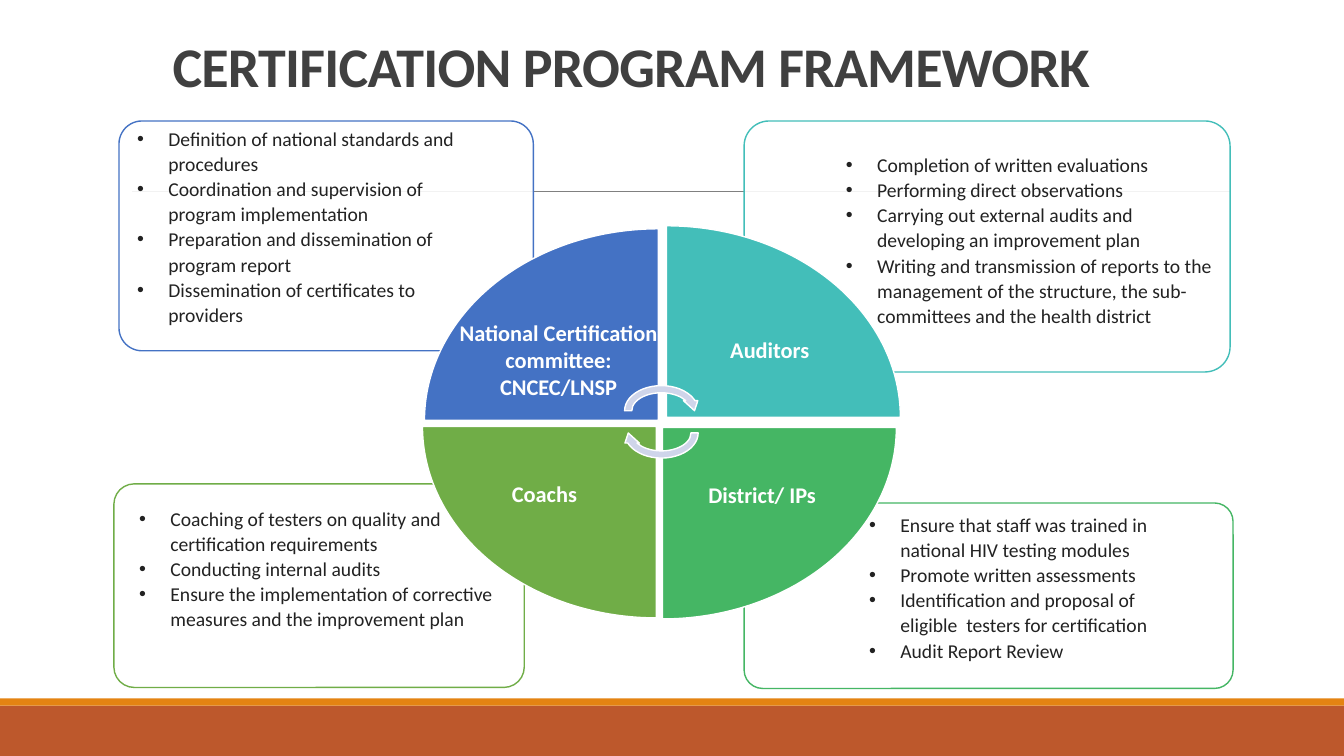
from pptx import Presentation
from pptx.dml.color import RGBColor
from pptx.enum.shapes import MSO_CONNECTOR as Connector, MSO_SHAPE as Preset
from pptx.enum.text import MSO_ANCHOR as Anchor, MSO_AUTO_SIZE as AutoSize, PP_ALIGN as Align
from pptx.oxml.ns import qn
from pptx.util import Inches, Pt
from lxml.etree import SubElement


def rgb(hex_color):
    return RGBColor.from_string(hex_color)


class FrameworkSlide:
    FONT = "Calibri"
    INK, TITLE_INK, WHITE = "222222", "404040", "FFFFFF"
    CELL = 0.1
    WEDGE_SIZE = 23.2, 19

    def __init__(self, deck, layout):
        self.slide = deck.slides.add_slide(deck.slide_layouts[layout])
        self.shapes = self.slide.shapes

    def grid(self, *cells):
        return [Inches(cell * self.CELL) for cell in cells]

    def move(self, holder, box):
        holder.left, holder.top, holder.width, holder.height = self.grid(*box)

    def style(self, paragraph, size, color, bold=False):
        font = paragraph.font
        font.name, font.size, font.bold = self.FONT, Pt(size), bold
        font.color.rgb = rgb(color)

    def frame(self, holder, anchor, inset):
        frame = holder.text_frame
        frame.word_wrap, frame.auto_size = True, AutoSize.NONE
        frame.vertical_anchor = anchor
        frame.margin_left = frame.margin_right = Inches(inset)
        frame.margin_top = frame.margin_bottom = Inches(inset)
        return frame

    def title(self, text, box):
        heading = self.shapes.title
        self.move(heading, box)
        frame = self.frame(heading, Anchor.BOTTOM, 0.05)
        frame.text = text
        paragraph = frame.paragraphs[0]
        paragraph.alignment, paragraph.line_spacing = Align.CENTER, 0.85
        self.style(paragraph, 40, self.TITLE_INK, True)
        paragraph.runs[0].font._element.set("spc", "-50")

    def shape(self, preset, box, fill, line=None, turn=0):
        shape = self.shapes.add_shape(preset, *self.grid(*box))
        shape.shadow.inherit = False
        shape.rotation = turn
        shape.fill.solid()
        shape.fill.fore_color.rgb = rgb(fill)
        if line:
            shape.line.color.rgb = rgb(line)
            shape.line.width = Pt(1)
        else:
            shape.line.fill.background()
        return shape

    def rule(self, left, right, row, color):
        rule = self.shapes.add_connector(
            Connector.STRAIGHT, *self.grid(left, row, right, row))
        rule.line.color.rgb = rgb(color)
        rule.line.width = Pt(0.5)
        SubElement(rule._element.spPr, qn("a:effectLst"))

    def card(self, box, color):
        card = self.shape(Preset.ROUNDED_RECTANGLE, box, self.WHITE, color)
        card.adjustments[0] = 0.1
        tint = card._element.spPr.find(qn("a:solidFill"))[0]
        SubElement(tint, qn("a:alpha"), val="90000")

    def bullets(self, index, duties, box):
        body = self.slide.placeholders[index]
        self.move(body, box)
        self.shapes._spTree.append(body._element)
        frame = self.frame(body, Anchor.TOP, 0.03)
        frame.text = "\n".join(duties)
        for paragraph in frame.paragraphs:
            props = paragraph._p.get_or_add_pPr()
            props.set("marL", str(Inches(0.51)))
            props.set("indent", str(Inches(-0.31)))
            SubElement(props, qn("a:buFont"), typeface="Arial")
            SubElement(props, qn("a:buChar"), char="•")
            paragraph.alignment, paragraph.line_spacing = Align.LEFT, 1.07
            paragraph.space_before = paragraph.space_after = Pt(0)
            self.style(paragraph, 14, self.INK)

    def wedge(self, left, top, color, turn):
        width, height = self.WEDGE_SIZE
        if turn % 180:
            shift = (width - height) / 2
            box = left + shift, top - shift, height, width
        else:
            box = left, top, width, height
        self.shape(Preset.PIE_WEDGE, box, color, self.WHITE, turn)

    def label(self, text, box):
        caption = self.shapes.add_textbox(*self.grid(*box))
        frame = self.frame(caption, Anchor.MIDDLE, 0.12)
        frame.text = text
        for paragraph in frame.paragraphs:
            paragraph.alignment = Align.CENTER
            self.style(paragraph, 16, self.WHITE, True)


ROLES = [
    dict(name="National Certification committee:\nCNCEC/LNSP", color="4472C4",
         card=(11.8, 12, 41.1, 22.8), list=(11.3, 12.1, 36.8, 22.8),
         wedge=(42.1, 22.7), label=(43.2, 29, 24.4, 13.4),
         duties=["Definition of national standards and procedures",
                 "Coordination and supervision of program implementation",
                 "Preparation and dissemination of program report",
                 "Dissemination of certificates to providers"]),
    dict(name="Auditors", color="43BEB9",
         card=(73.8, 12, 48.2, 24.9), list=(81.6, 14.7, 40.1, 22.3),
         wedge=(66.1, 22.4), label=(66.1, 28, 20.5, 13.4),
         duties=["Completion of written evaluations",
                 "Performing direct observations",
                 "Carrying out external audits and developing an improvement plan",
                 "Writing and transmission of reports to the management of the "
                 "structure, the sub-committees and the health district"]),
    dict(name="District/ IPs", color="45B664",
         card=(73.8, 49.9, 48.5, 18.4), list=(83.9, 50.4, 34.7, 17.8),
         wedge=(65.7, 42.4), label=(65.7, 42.4, 19.8, 13.4),
         duties=["Ensure that staff was trained in national HIV testing modules",
                 "Promote written assessments",
                 "Identification and proposal of eligible  testers for certification",
                 "Audit Report Review"]),
    dict(name="Coachs", color="70AD47",
         card=(11.3, 48, 40.7, 20.2), list=(11.5, 49.8, 38.8, 18.5),
         wedge=(41.9, 42.3), label=(41.6, 42.3, 24.8, 13.4),
         duties=["Coaching of testers on quality and certification requirements",
                 "Conducting internal audits",
                 "Ensure the implementation of corrective measures and the "
                 "improvement plan"]),
]


def main():
    deck = Presentation()
    deck.slide_width, deck.slide_height = Inches(13.33), Inches(7.5)
    page = FrameworkSlide(deck, 4)
    page.shape(Preset.RECTANGLE, (0, 70, 133.3, 5), "BD582C")
    page.shape(Preset.RECTANGLE, (0, 69.3, 133.3, 0.7), "E48312")
    page.rule(13.1, 122.1, 19, "808080")
    page.title("CERTIFICATION PROGRAM FRAMEWORK", (10.1, -4, 105, 14.3))
    for index, role in enumerate(ROLES, start=1):
        page.card(role["card"], role["color"])
        page.bullets(index, role["duties"], role["list"])
    for quarter, role in enumerate(ROLES):
        page.wedge(*role["wedge"], role["color"], quarter * 90)
        page.label(role["name"], role["label"])
    for top, turn in ((37.9, 0), (40.1, 180)):
        page.shape(Preset.CIRCULAR_ARROW, (61.6, top, 8, 5.7), "CFD5EA", page.WHITE, turn)
    deck.save("out.pptx")


if __name__ == "__main__":
    main()
